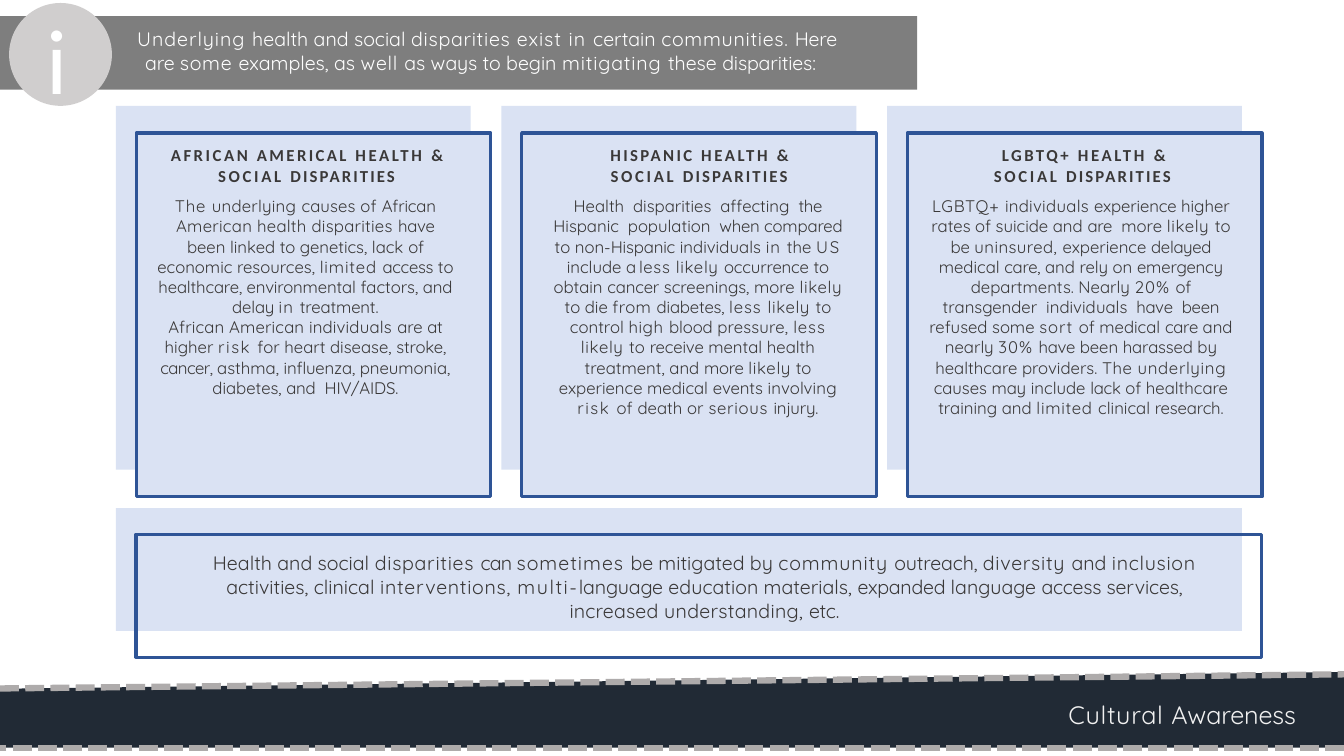
from pptx import Presentation, util as u
from pptx.dml.color import RGBColor
from pptx.enum import dml, shapes, text
from pptx.oxml import parse_xml
from pptx.oxml.ns import nsdecls

GRAY, DISC, PALE, BLUE = "7E7E7E", "D0CECE", "DAE2F3", "2E5496"
NAVY, DASH, INK, WHITE, MIST = "212A35", "AEABAB", "3A3838", "FFFFFF", "F1F1F1"
RECT, OVAL = shapes.MSO_SHAPE.RECTANGLE, shapes.MSO_SHAPE.OVAL
LEFT, MID = text.PP_ALIGN.LEFT, text.PP_ALIGN.CENTER

HEAD = {"name": "Calibri", "size": u.Pt(12), "bold": True}
BODY = {"name": "Quicksand", "size": u.Pt(12), "bold": False}
LEAD = {"name": "Quicksand", "size": u.Pt(14)}
SIGN = {"name": "Calibri", "size": u.Pt(66)}
FOOT = {"name": "Quicksand", "size": u.Pt(18)}


def hue(code):
    return RGBColor.from_string(code)


def cell(n):
    """Length of n cells; the slide is 160 columns by 90 rows."""
    return u.Emu(round(n * 76200))


class Deck:
    def __init__(self):
        self.prs = Presentation()
        self.prs.slide_width, self.prs.slide_height = cell(160), cell(90)
        self.page = self.prs.slides.add_slide(self.prs.slide_layouts[6]).shapes

    def paint(self, shape, fill, line=None):
        shape.shadow.inherit = False
        if fill:
            shape.fill.solid()
            shape.fill.fore_color.rgb = hue(fill)
        else:
            shape.fill.background()
        if line:
            shape.line.color.rgb = hue(line)
            shape.line.width = u.Pt(2.25)
        else:
            shape.line.fill.background()
        return shape

    def block(self, x, y, w, h, fill, line=None, kind=RECT):
        return self.paint(self.page.add_shape(kind, *map(cell, (x, y, w, h))), fill, line)

    def area(self, points, fill):
        pen = self.page.build_freeform(*points[0], scale=cell(1))
        pen.add_line_segments(points[1:], close=True)
        return self.paint(pen.convert_to_shape(), fill)

    def dash(self, *ends):
        line = self.page.add_connector(shapes.MSO_CONNECTOR.STRAIGHT, *map(cell, ends))
        look = {"width": u.Pt(4.5), "dash_style": dml.MSO_LINE.SQUARE_DOT}
        for key, val in look.items():
            setattr(line.line, key, val)
        line.line.color.rgb = hue(DASH)
        line._element.spPr.append(parse_xml(f"<a:effectLst {nsdecls('a')}/>"))

    def label(self, x, y, w, h, paras, color):
        self.letter(self.page.add_textbox(*map(cell, (x, y, w, h))), paras, color)

    def letter(self, shape, paras, color, top=0.12):
        """Each para: marked text, font, left, right, indent, space before, alignment."""
        frame = shape.text_frame
        look = {"word_wrap": True, "vertical_anchor": text.MSO_ANCHOR.TOP,
                "margin_left": 0, "margin_right": 0, "margin_bottom": 0,
                "margin_top": cell(top)}
        for key, val in look.items():
            setattr(frame, key, val)
        for n, (words, font, left, right, dent, before, align) in enumerate(paras):
            para = frame.add_paragraph() if n else frame.paragraphs[0]
            para.alignment, para.space_before = align, u.Pt(before)
            for key, val in (("marL", left), ("marR", right), ("indent", dent)):
                para._p.get_or_add_pPr().set(key, str(cell(val)))
            # "{n}" opens a run whose letters are spaced by n points
            for piece in words.split("{")[1:]:
                gap, _, part = piece.partition("}")
                run = para.add_run()
                run.text = part
                for key, val in font.items():
                    setattr(run.font, key, val)
                run.font.color.rgb = hue(color)
                run._r.get_or_add_rPr().set("spc", str(round(float(gap) * 100)))


INTRO = [
    ("{.7}Underlying {0}health and social {.5}disparities {.7}exist {.9}in {0}certain "
     "{.5}communities. {-.2}Here", LEAD, 0.12, 0, 0, 1, LEFT),
    ("{-.1}are {.5}some {0}examples, as {.5}well {0}as ways to begin {.6}mitigating "
     "{0}these {-.1}disparities:", LEAD, 1.08, 0, 0, 0.1, LEFT),
]

CARDS = [
    [("{1.8}AFRICAN {1.7}AMERICAL {1.9}HEALTH {-.5}& {1.9}SOCIAL {1.5}DISPARITIES",
      HEAD, 3.96, 5.6, 0, 8.9, MID),
     ("{.6}The {.2}underlying {.1}causes {.2}of {-.1}African {.2}American health disparities "
      "{-.2}have {0}been linked to genetics, lack {-.2}of {0}economic resources, {.6}limited "
      "{-.2}access {0}to {-.1}healthcare, environmental {0}factors, {-.1}and delay {.8}in "
      "{-.1}treatment.", BODY, 2.28, 4.2, 0, 7.5, MID),
     ("{.1}African American individuals {0}are {-.2}at {0}higher {1.1}risk {0}for heart "
      "disease, {-.1}stroke, {-.4}cancer, {0}asthma, {-.1}influenza, {0}pneumonia, diabetes, "
      "{-.2}and{3} {-.1}HIV/AIDS.", BODY, 2.28, 4.2, 0, 0, MID)],
    [("{1.7}HISPANIC {1.9}HEALTH {-.6}& {1.9}SOCIAL {1.5}DISPARITIES",
      HEAD, 10.32, 10.3, 0, 8.9, MID),
     ("{0}Health{3} {0}disparities{3} {0}affecting{3} {-.2}the {0}Hispanic{3} {0}population{3} "
      "{-.2}when {-.1}compared {0}to non-{-.1}Hispanic {0}individuals {.8}in {0}the {1.4}US "
      "{0}include {-1.3}a {.5}less likely {-.1}occurrence {0}to obtain {-.1}cancer "
      "{0}screenings, more {.5}likely {0}to die {.3}from {-.1}diabetes, {.7}less {.5}likely "
      "{0}to control {.4}high {0}blood {.1}pressure, {.7}less {.5}likely {.1}to {-.1}receive "
      "{0}mental health treatment, and {-.2}more {.5}likely{0} to experience medical "
      "{-.1}events {.1}involving {1.1}risk {.1}of {0}death {.1}or {.5}serious {-.1}injury.",
      BODY, 3.24, 3.5, 0, 7.5, MID)],
    [("{1.8}LGBTQ+ {1.9}HEALTH {-.5}& {1.9}SOCIAL {1.5}DISPARITIES",
      HEAD, 10.32, 10, 0.96, 8.9, LEFT),
     ("{.5}LGBTQ+ {.2}individuals {-.1}experience {0}higher rates of suicide and {-.2}are{3} "
      "{0}more {.5}likely {0}to {-.1}be {.3}uninsured, {0}experience {-.2}delayed {0}medical "
      "{-.2}care, {0}and rely on {-.1}emergency {0}departments. Nearly {.7}20% {-.2}of "
      "{0}transgender{3} {0}individuals{3} {-.2}have{3} {-.2}been {0}refused some {.7}sort "
      "{0}of medical {-.2}care {0}and nearly {.7}30% {-.2}have {0}been {-.1}harassed {0}by "
      "healthcare providers. {.3}The {.5}underlying {0}causes may include {-.2}lack {0}of "
      "healthcare training and {.5}limited {0}clinical {-.1}research.",
      BODY, 2.64, 3.5, 0, 7.5, MID)],
]

REMEDY = [
    ("{0}Health and social {.5}disparities {-.6}can {.7}sometimes {-.1}be {0}mitigated by "
     "{.6}community {-.1}outreach, {.5}diversity {0}and {.5}inclusion {0}activities, clinical "
     "{.5}interventions, {1.1}multi-{-.1}language {0}education materials, {-.2}expanded "
     "{0}language {-.2}access {-.1}services, {.1}increased {.2}understanding, {-.2}etc.",
     LEAD, 6, 4.7, 0, 12.1, MID),
]


def main():
    deck = Deck()

    # Intro banner with its info sign
    deck.block(0, 1.92, 109.2, 8.76, GRAY)
    deck.label(16.2, 3.12, 87, 6, INTRO, WHITE)
    deck.block(1.08, 0.36, 12.24, 12.24, DISC, kind=OVAL)
    deck.label(5.4, 0.12, 2.88, 13.56, [("{-.5}i", SIGN, 0.12, 0, 0, 1, LEFT)], WHITE)

    # Three cards, each over an offset backing
    left, wide, step = 16.2, 42.24, 45.9
    for n, paras in enumerate(CARDS):
        x = left + n * step
        deck.block(x - 2.4, 12.6, wide, 43.32, PALE)
        deck.letter(deck.block(x, 15.84, wide, 43.32, PALE, BLUE), paras, INK, 1.44)

    # Remedy box across all cards
    span = 2 * step + wide
    deck.block(left - 2.4, 60.48, span, 14.64, PALE)
    deck.letter(deck.block(left, 63.6, span, 14.64, None, BLUE), REMEDY, INK, 2.04)

    # Footer band with dashed edges
    high, low, base = 80.28, 81.96, 89.04
    deck.area([(160, high), (0, low), (0, base), (160, base)], NAVY)
    deck.dash(0, low, 160, high)
    deck.dash(160, base, 0, base)
    deck.label(127.08, 83.16, 29.52, 3.96,
               [("{.5}Cultural {-.1}Awareness", FOOT, 0.12, 0, 0, 0.4, LEFT)], MIST)

    deck.prs.save("out.pptx")


if __name__ == "__main__":
    main()
